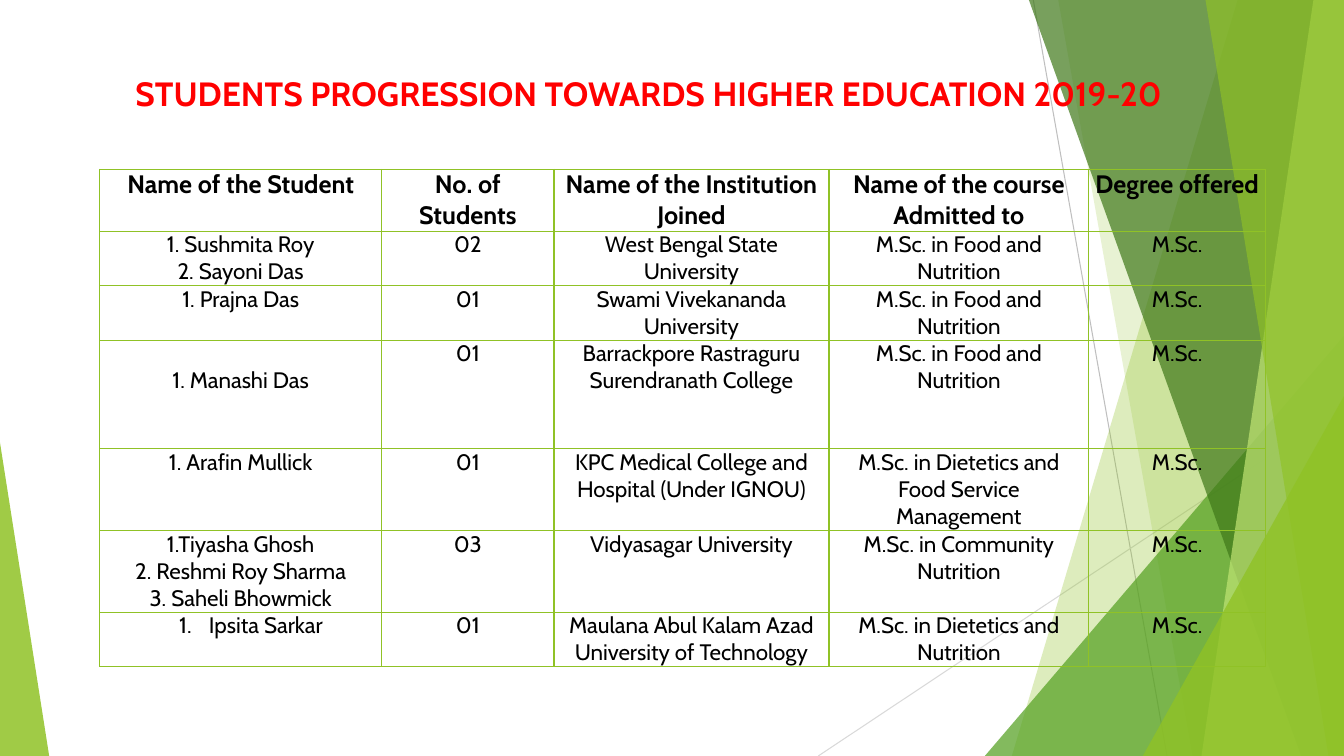
from lxml.etree import SubElement
from pptx import Presentation
from pptx.dml.color import RGBColor
from pptx.enum.shapes import MSO_CONNECTOR, MSO_SHAPE
from pptx.enum.text import MSO_ANCHOR, MSO_AUTO_SIZE, PP_ALIGN
from pptx.oxml.ns import qn
from pptx.util import Cm, Pt

HUES = {
    "lime": "90C226", "leaf": "54A021", "moss": "3F7819", "pale": "C0E474",
    "gray": "BFBFBF", "mist": "D9D9D9", "red": "FF0000", "black": "000000",
}
WIDE, HIGH = 33.87, 19.05
LINES = [
    ("gray", 26.04, 0, 29.41, HIGH),
    ("mist", WIDE, 10.24, 20.62, HIGH),
]
BANDS_BACK = [("lime", 30, 31.19, 25.5), ("lime", 20, 26.67, 30.05)]
BANDS_FRONT = [
    ("moss", 70, 25.93, 32.79),
    ("pale", 70, 33.1, 30.28),
    ("lime", 65, 30.38, 33.48),
]
COLS = [7.11, 4.34, 6.93, 6.55, 4.45]
ROWS = [1.56, 1.37, 1.37, 2.74, 2.06, 2.06, 1.37]
FOOD = "M.Sc. in Food and Nutrition"
HEADS = ["Name of the Student", "No. of Students", "Name of the Institution Joined",
         "Name of the course Admitted to", "Degree offered"]
DATA = [
    ("1. Sushmita Roy\n2. Sayoni Das", "02", "West Bengal State University", FOOD),
    ("1. Prajna Das", "01", "Swami Vivekananda University", FOOD),
    ("1. Manashi Das", "01", "Barrackpore Rastraguru Surendranath College", FOOD),
    ("1. Arafin Mullick", "01", "KPC Medical College and Hospital (Under IGNOU)",
     "M.Sc. in Dietetics and Food Service Management"),
    ("1.Tiyasha Ghosh\n2. Reshmi Roy Sharma\n3. Saheli Bhowmick", "03",
     "Vidyasagar University", "M.Sc. in Community Nutrition"),
    ("Ipsita Sarkar", "01", "Maulana Abul Kalam Azad University of Technology",
     "M.Sc. in Dietetics and Nutrition"),
]


def tint(name):
    return RGBColor.from_string(HUES[name])


def assign(item, form):
    for key, value in form.items():
        setattr(item, key, value)


def write(frame, text, size, bold, hue):
    frame.text = text
    for para in frame.paragraphs:
        para.alignment = PP_ALIGN.CENTER
        for run in para.runs:
            assign(run.font, {"name": "Cabin", "size": Pt(size), "bold": bold})
            run.font.color.rgb = tint(hue)


def paint(shape, hue, alpha):
    shape.shadow.inherit = False
    shape.fill.solid()
    shape.fill.fore_color.rgb = tint(hue)
    color = shape.fill._xPr.find(qn("a:solidFill"))[0]
    SubElement(color, qn("a:alpha"), val=str(alpha * 1000))
    shape.line.fill.background()


def add_line(shapes, hue, *ends):
    line = shapes.add_connector(MSO_CONNECTOR.STRAIGHT, *[Cm(end) for end in ends])
    line.line.color.rgb = tint(hue)
    line.line.width = Pt(0.75)
    SubElement(line._element.spPr, qn("a:effectLst"))


def add_band(shapes, hue, alpha, top, base):
    form = shapes.build_freeform(Cm(top), 0)
    edge = [(WIDE, 0), (WIDE, HIGH), (base, HIGH)]
    form.add_line_segments([(Cm(x), Cm(y)) for x, y in edge], close=True)
    paint(form.convert_to_shape(), hue, alpha)


def add_peak(shapes, hue, alpha, left, top, width, tip):
    peak = shapes.add_shape(MSO_SHAPE.ISOSCELES_TRIANGLE, Cm(left), Cm(top),
                            Cm(width), Cm(HIGH - top))
    peak.adjustments[0] = tip
    paint(peak, hue, alpha)


def add_decor(shapes):
    for line in LINES:
        add_line(shapes, *line)
    for band in BANDS_BACK:
        add_band(shapes, *band)
    add_peak(shapes, "leaf", 72, 24.82, 8.46, 9.05, 1)
    for band in BANDS_FRONT:
        add_band(shapes, *band)
    add_peak(shapes, "lime", 80, 28.8, 9.98, 5.07, 1)
    add_peak(shapes, "lime", 85, 0, 11.15, 1.24, 0)


def set_title(shapes):
    title = shapes.title
    assign(title, {"left": Cm(1.88), "top": Cm(1.7),
                   "width": Cm(28.93), "height": Cm(3.66)})
    assign(title.text_frame, {"word_wrap": True, "auto_size": MSO_AUTO_SIZE.NONE,
                              "vertical_anchor": MSO_ANCHOR.TOP})
    write(title.text_frame, "STUDENTS PROGRESSION TOWARDS HIGHER EDUCATION 2019-20",
          24, True, "red")
    shapes._spTree.append(title._element)


def edge_cell(cell):
    props = cell._tc.get_or_add_tcPr()
    for side in ("lnL", "lnR", "lnT", "lnB"):
        line = SubElement(props, qn("a:" + side), w=str(Pt(1)))
        fill = SubElement(line, qn("a:solidFill"))
        SubElement(fill, qn("a:srgbClr"), val=HUES["lime"])


def number(para):
    props = para._p.get_or_add_pPr()
    props.set("marL", str(Cm(1.27)))
    props.set("indent", str(-Cm(0.75)))
    SubElement(props, qn("a:buFont"), typeface="Cabin")
    SubElement(props, qn("a:buAutoNum"), type="arabicPeriod")


def add_grid(shapes):
    grid = shapes.add_table(len(ROWS), len(COLS), Cm(2.51), Cm(4.27),
                            Cm(sum(COLS)), Cm(sum(ROWS))).table
    assign(grid, {"first_row": False, "horz_banding": False})
    for col, width in zip(grid.columns, COLS):
        col.width = Cm(width)
    for row, height in zip(grid.rows, ROWS):
        row.height = Cm(height)
    texts = [HEADS] + [(*line, "M.Sc.") for line in DATA]
    for r, line in enumerate(texts):
        for c, text in enumerate(line):
            cell = grid.cell(r, c)
            assign(cell, {"margin_left": Cm(0.15), "margin_right": Cm(0.15),
                          "margin_top": 0, "margin_bottom": 0})
            edge_cell(cell)
            cell.fill.background()
            write(cell.text_frame, text, 16 if r else 18, r == 0, "black")
    grid.cell(3, 0).margin_top = Cm(0.69)
    number(grid.cell(6, 0).text_frame.paragraphs[0])


def main():
    deck = Presentation()
    assign(deck, {"slide_width": Cm(WIDE), "slide_height": Cm(HIGH)})
    shapes = deck.slides.add_slide(deck.slide_layouts[5]).shapes
    add_decor(shapes)
    set_title(shapes)
    add_grid(shapes)
    deck.save("out.pptx")


if __name__ == "__main__":
    main()
